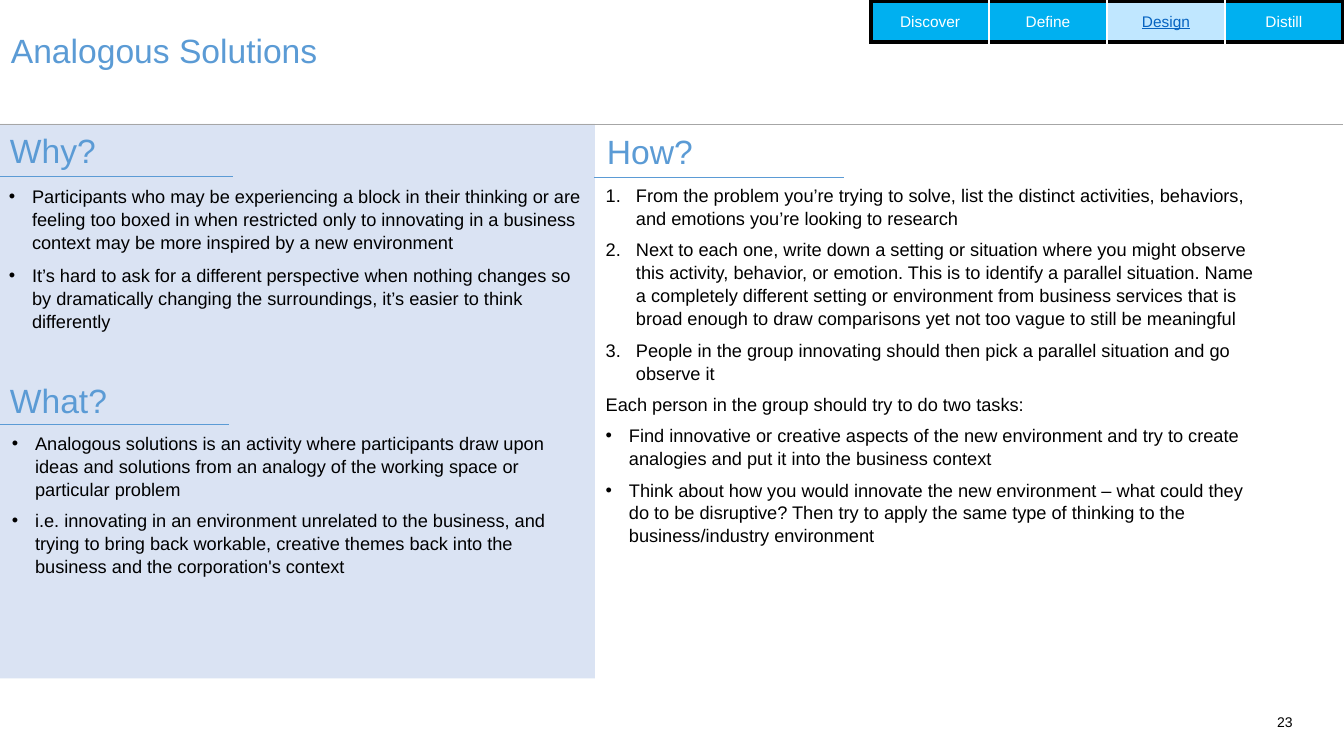
"""Build the Analogous Solutions slide."""
import pptx
import pptx.util
import pptx.dml.color
import pptx.enum.shapes
import pptx.enum.text
import pptx.oxml.ns
from lxml import etree

Inches, Pt = pptx.util.Inches, pptx.util.Pt
rgb = pptx.dml.color.RGBColor.from_string
qn = pptx.oxml.ns.qn
align = pptx.enum.text.PP_ALIGN
hues = {
    "blue": "5B9BD5", "panel": "DAE3F3", "black": "000000", "white": "FFFFFF",
    "grey": "A6A6A6", "tab": "00B0F0", "pale": "C0E7FF", "link": "0563C1",
}


def write(frame, text, size=13, hue="black", side=align.LEFT, mark=None,
          indent=0, after=0, lead=None, under=False):
    """Fill the empty first paragraph of a frame, or add one more."""
    para = frame.paragraphs[0]
    if para.runs:
        para = frame.add_paragraph()
    para.alignment = side
    para.space_after = Pt(after)
    para.line_spacing = lead
    if mark:
        props = para._p.get_or_add_pPr()
        props.set("marL", str(Inches(indent)))
        props.set("indent", str(-Inches(indent)))
        etree.SubElement(props, qn("a:buFont"), typeface="Arial")
        if mark == "1.":
            etree.SubElement(props, qn("a:buAutoNum"), type="arabicPeriod")
        else:
            etree.SubElement(props, qn("a:buChar"), char=mark)
    run = para.add_run()
    run.text = text
    run.font.name = "Arial"
    run.font.size = Pt(size)
    run.font.color.rgb = rgb(hues[hue])
    run.font.underline = under


def add_box(left, top, width, height):
    """Add a wrapping text box and return its frame."""
    box = slide.shapes.add_textbox(
        Inches(left), Inches(top), Inches(width), Inches(height))
    box.text_frame.word_wrap = True
    box.text_frame.auto_size = pptx.enum.text.MSO_AUTO_SIZE.SHAPE_TO_FIT_TEXT
    return box.text_frame


deck = pptx.Presentation()
deck.slide_width, deck.slide_height = Inches(13.33), Inches(7.5)
slide = deck.slides.add_slide(deck.slide_layouts[6])

panel = slide.shapes.add_shape(
    pptx.enum.shapes.MSO_SHAPE.RECTANGLE,
    Inches(0), Inches(1.23), Inches(5.9), Inches(5.5))
panel.shadow.inherit = False
panel.fill.solid()
panel.fill.fore_color.rgb = rgb(hues["panel"])
panel.line.fill.background()

heads = [
    ("Analogous Solutions", 0.01, 0.25, 8.16),
    ("Why?", 0, 1.24, 1.22),
    ("What?", 0, 3.72, 1.22),
    ("How?", 5.92, 1.25, 1.22),
]
for text, left, top, width in heads:
    write(add_box(left, top, width, 0.5), text, size=24, hue="blue")

rules = [
    (-0.02, 2.31, 1.75, "blue"),
    (-0.02, 2.27, 4.21, "blue"),
    (5.89, 8.37, 1.76, "blue"),
    (-0.02, 13.32, 1.23, "grey"),
]
for start, end, top, hue in rules:
    rule = slide.shapes.add_connector(
        pptx.enum.shapes.MSO_CONNECTOR.STRAIGHT,
        Inches(start), Inches(top), Inches(end), Inches(top))
    rule.line.color.rgb = rgb(hues[hue])
    rule.line.width = Pt(0.5)
    etree.SubElement(rule._element.spPr, qn("a:effectLst"))

bodies = [
    ((-0.01, 1.78, 5.9, 1.83), 7.3, [
        ("•", "Participants who may be experiencing a block in their thinking or are feeling too boxed in when restricted only to innovating in a business context may be more inspired by a new environment"),
        ("•", "It’s hard to ask for a different perspective when nothing changes so by dramatically changing the surroundings, it’s easier to think differently"),
    ]),
    ((0.02, 4.23, 5.87, 1.5), 6, [
        ("•", "Analogous solutions is an activity where participants draw upon ideas and solutions from an analogy of the working space or particular problem"),
        ("•", "i.e. innovating in an environment unrelated to the business, and trying to bring back workable, creative themes back into the business and the corporation's context"),
    ]),
    ((5.91, 1.77, 6.67, 3.58), 6, [
        ("1.", "From the problem you’re trying to solve, list the distinct activities, behaviors, and emotions you’re looking to research"),
        ("1.", "Next to each one, write down a setting or situation where you might observe this activity, behavior, or emotion. This is to identify a parallel situation. Name a completely different setting or environment from business services that is broad enough to draw comparisons yet not too vague to still be meaningful"),
        ("1.", "People in the group innovating should then pick a parallel situation and go observe it"),
        (None, "Each person in the group should try to do two tasks:"),
        ("•", "Find innovative or creative aspects of the new environment and try to create analogies and put it into the business context"),
        ("•", "Think about how you would innovate the new environment – what could they do to be disruptive? Then try to apply the same type of thinking to the business/industry environment"),
    ]),
]
for place, after, items in bodies:
    frame = add_box(*place)
    for mark, text in items:
        write(frame, text, mark=mark, indent=0.3 if mark == "1." else 0.23,
              after=after, lead=1.05)

steps = ["Discover", "Define", "Design", "Distill"]
table = slide.shapes.add_table(
    1, len(steps), Inches(8.64), Inches(0.01), Inches(4.68), Inches(0.41)).table
for col, step in enumerate(steps):
    cell = table.cell(0, col)
    live = step == "Design"
    cell.vertical_anchor = pptx.enum.text.MSO_ANCHOR.MIDDLE
    write(cell.text_frame, step, size=11, hue="link" if live else "white",
          side=align.CENTER, under=live)
    props = cell._tc.get_or_add_tcPr()
    edges = {"L": col == 0, "R": col == len(steps) - 1, "T": True, "B": True}
    for edge, outer in edges.items():
        line = etree.SubElement(
            props, qn("a:ln" + edge), w=str(Pt(3 if outer else 1)))
        fill = etree.SubElement(line, qn("a:solidFill"))
        etree.SubElement(fill, qn("a:srgbClr"),
                         val=hues["black" if outer else "white"])
    cell.fill.solid()
    cell.fill.fore_color.rgb = rgb(hues["pale" if live else "tab"])

page = add_box(12.48, 7.08, 0.34, 0.17)
page.margin_left = page.margin_right = page.margin_top = page.margin_bottom = 0
write(page, "23", size=10, side=align.RIGHT)

deck.save("out.pptx")
